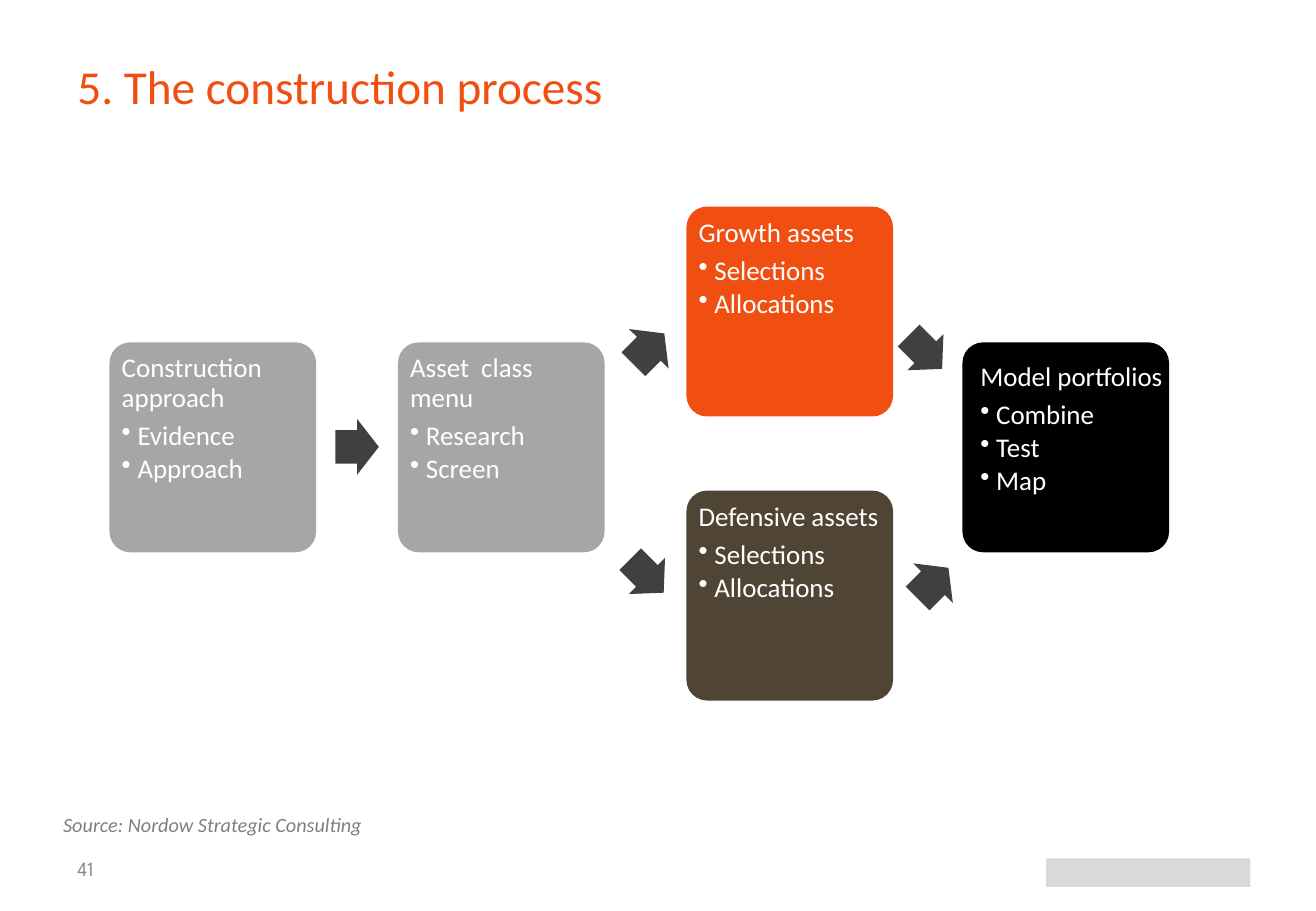
"""Build the construction process slide: five cards joined by arrows."""
from lxml.etree import SubElement
from pptx import Presentation
from pptx.dml.color import RGBColor
from pptx.enum.shapes import MSO_SHAPE
from pptx.enum.text import MSO_ANCHOR, PP_ALIGN
from pptx.oxml.ns import qn
from pptx.util import Cm, Pt

THEME = {
    "accent": "F14F11", "grey": "A6A6A6", "brown": "504434", "black": "000000",
    "arrow": "404040", "white": "FFFFFF", "number": "8C8C8C", "source": "808080",
    "footer": "D9D9D9", "body_font": "Calibri", "number_font": "League Spartan",
    "title_size": 28, "card_size": 16, "note_size": 12,
}


def add_run(p, text, size, color, font="body_font", italic=False):
    r = p.add_run()
    r.text = text
    values = {"name": THEME[font], "size": Pt(THEME[size]), "italic": italic}
    for name, value in values.items():
        setattr(r.font, name, value)
    r.font.color.rgb = RGBColor.from_string(THEME[color])


def add_solid(kind, box, color, adjustments=()):
    sp = s.shapes.add_shape(kind, *map(Cm, box))
    sp.shadow.inherit = False
    sp.fill.solid()
    sp.fill.fore_color.rgb = RGBColor.from_string(THEME[color])
    sp.line.fill.background()
    for i, value in enumerate(adjustments):
        sp.adjustments[i] = value
    return sp


prs = Presentation()
prs.slide_width, prs.slide_height = Cm(27.51), Cm(19.05)
s = prs.slides.add_slide(prs.slide_layouts[6])

middle, top = MSO_ANCHOR.MIDDLE, MSO_ANCHOR.TOP
labels = [
    ((1.37, 0.76, 24.77, 2.06), middle,
     ("5. The construction process", "title_size", "accent")),
    ((1.37, 17.65, 4.8, 1.02), middle,
     ("41", "note_size", "number", "number_font")),
    ((1.07, 16.87, 9, 0.76), top,
     ("Source: Nordow Strategic Consulting", "note_size", "source", "body_font", True)),
]
for box, anchor, run in labels:
    tf = s.shapes.add_textbox(*map(Cm, box)).text_frame
    tf.word_wrap, tf.vertical_anchor = True, anchor
    add_run(tf.paragraphs[0], *run)

add_solid(MSO_SHAPE.RECTANGLE, (21.87, 17.95, 4.27, 0.6), "footer")

CARD_W, CARD_H = 4.32, 4.39
LEFT, STEP, LAST = 2.29, 6.03, 20.12
UPPER, CENTRE, LOWER = 4.32, 7.16, 10.26
even, shifted = (0.13, 0.13, 0.13), (0.25, 0.3, 0)
cards = [
    (LEFT, CENTRE, "grey", even, "Construction approach", ["Evidence", "Approach"]),
    (LEFT + STEP, CENTRE, "grey", even, "Asset  class menu", ["Research", "Screen"]),
    (LEFT + 2 * STEP, UPPER, "accent", even, "Growth assets", ["Selections", "Allocations"]),
    (LEFT + 2 * STEP, LOWER, "brown", even, "Defensive assets", ["Selections", "Allocations"]),
    (LAST, CENTRE, "black", shifted, "Model portfolios", ["Combine", "Test", "Map"]),
]
for x, y, color, insets, heading, items in cards:
    sp = add_solid(MSO_SHAPE.ROUNDED_RECTANGLE, (x, y, CARD_W, CARD_H), color, [0.1])
    tf = sp.text_frame
    left, upper, right = map(Cm, insets)
    values = {"word_wrap": True, "vertical_anchor": top, "margin_left": left,
              "margin_top": upper, "margin_right": right, "margin_bottom": Cm(0.13)}
    for name, value in values.items():
        setattr(tf, name, value)
    for i, text in enumerate([heading, *items]):
        p = tf.add_paragraph() if i else tf.paragraphs[0]
        values = {"alignment": PP_ALIGN.LEFT, "line_spacing": 0.9,
                  "space_after": Pt(2.4 if i else 5.6)}
        for name, value in values.items():
            setattr(p, name, value)
        add_run(p, text, "card_size", "white")
        if i:
            pPr = p._p.get_or_add_pPr()
            pPr.set("marL", str(Cm(0.33)))
            pPr.set("indent", str(-Cm(0.33)))
            SubElement(pPr, qn("a:buChar")).set("char", "•")

level, falling = (0.91, 1.17), (0.99, 1.07)
arrows = [
    (7.01, 8.76, level, 0),
    (13.11, 6.71, level, 315),
    (13.03, 11.51, falling, 45),
    (18.85, 6.83, falling, 45),
    (19.05, 11.61, level, 315),
]
for x, y, size, angle in arrows:
    sp = add_solid(MSO_SHAPE.RIGHT_ARROW, (x, y, *size), "arrow", [0.6, 0.5])
    sp.rotation = angle

prs.save("out.pptx")
